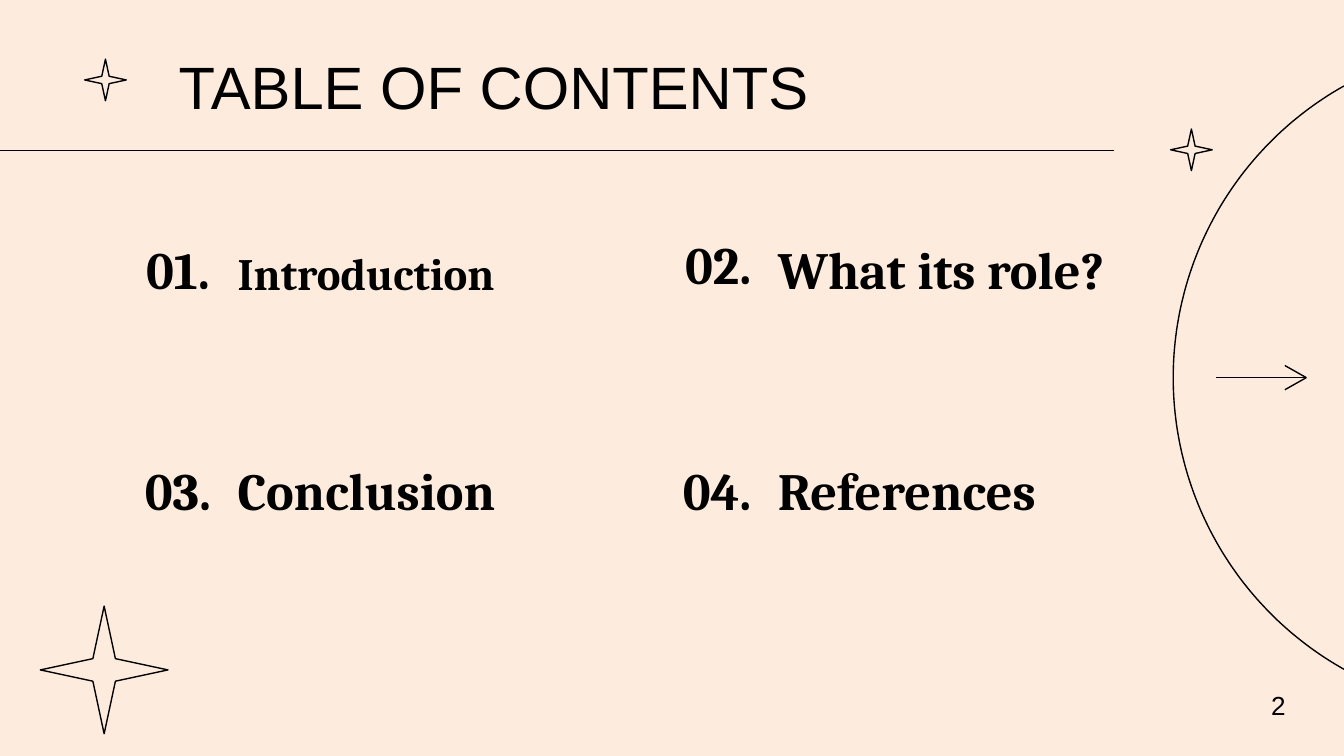
from math import asin, cos, sin

from pptx import Presentation
from pptx.dml.color import RGBColor
from pptx.enum.shapes import MSO_CONNECTOR, MSO_SHAPE
from pptx.enum.text import MSO_ANCHOR, MSO_AUTO_SIZE, PP_ALIGN
from pptx.oxml.ns import qn
from pptx.util import Inches, Pt

BLACK = RGBColor(0x00, 0x00, 0x00)
CREAM = RGBColor(0xFD, 0xEC, 0xDD)
STRAIGHT = MSO_CONNECTOR.STRAIGHT
STAR = MSO_SHAPE.STAR_4_POINT
MIDDLE, TOP = MSO_ANCHOR.MIDDLE, MSO_ANCHOR.TOP
LEFT, RIGHT = PP_ALIGN.LEFT, PP_ALIGN.RIGHT
NO_AUTOFIT = MSO_AUTO_SIZE.NONE

PAGE_WIDTH = 10
PAGE_HEIGHT = PAGE_WIDTH * 9 / 16
LINE_WIDTH = Pt(0.75)
NUMBER_WIDTH, ENTRY_WIDTH, ENTRY_HEIGHT = 0.88, 2.89, 0.58
COLUMNS = (1.67, 5.69)
ROWS = (1.71, 3.35)
ENTRIES = ("Introduction", "What its role?", "Conclusion", "References")
SMALL_ENTRY = "Introduction"
NUMBER_SHIFTS = {"01.": (-0.01, 0), "02.": (0, -0.04)}


def place(shape, left, top, width, height):
    shape.left, shape.top = Inches(left), Inches(top)
    shape.width, shape.height = Inches(width), Inches(height)


def write(shape, text, size, font, bold=False, align=LEFT, anchor=TOP, inset=0.05):
    frame = shape.text_frame
    frame.text = text
    frame.word_wrap = True
    frame.auto_size = NO_AUTOFIT
    frame.vertical_anchor = anchor
    frame.margin_left = frame.margin_right = Inches(0.1)
    frame.margin_top = frame.margin_bottom = Inches(inset)
    para = frame.paragraphs[0]
    para.alignment = align
    span = para.runs[0]
    span.font.name = font
    span.font.size = Pt(size)
    span.font.bold = bold
    span.font.color.rgb = BLACK


def add_text(page, left, top, width, height, text, size, font, **style):
    box = page.shapes.add_textbox(0, 0, 0, 0)
    place(box, left, top, width, height)
    write(box, text, size, font, **style)


def add_line(shapes, start, end):
    line = shapes.add_connector(STRAIGHT, *(Inches(value) for value in start + end))
    line.line.color.rgb = BLACK
    line.line.width = LINE_WIDTH
    properties = line._element.spPr
    properties.append(properties.makeelement(qn("a:effectLst"), {}))


def outline(shape):
    shape.shadow.inherit = False
    shape.fill.background()
    shape.line.color.rgb = BLACK
    shape.line.width = LINE_WIDTH


def add_star(page, left, top, size):
    star = page.shapes.add_shape(STAR, 0, 0, 0, 0)
    place(star, left, top, size, size)
    star.adjustments[0] = 0.125
    outline(star)


def add_arc(page, left, top, width, height, steps=120):
    """Draw the left part of a circle, cut off by the right side of the box."""
    half = height / 2
    radius = (width ** 2 + half ** 2) / (2 * width)
    reach = asin(half / radius)
    points = []
    for step in range(steps + 1):
        angle = reach * (2 * step / steps - 1)
        points.append((Inches(left + radius * (1 - cos(angle))),
                       Inches(top + half + radius * sin(angle))))
    builder = page.shapes.build_freeform(*points[0])
    builder.add_line_segments(points[1:], close=False)
    outline(builder.convert_to_shape())


def add_arrow(page, left, top, width, height):
    arrow = page.shapes.add_group_shape()
    tip = (left + width, top + height / 2)
    barb = left + width - 0.16
    for start in ((left, tip[1]), (barb, top), (barb, top + height)):
        add_line(arrow.shapes, start, tip)


def add_header(page, left, top, width, height):
    title = page.shapes.title
    place(title, left, top, width, height)
    write(title, "TABLE OF CONTENTS", 32, "Arial")
    rule_top = top + height + 0.16
    add_line(page.shapes, (8.29, rule_top), (0, rule_top))


def add_entry(page, left, top, number, label):
    """Place a label at the given corner, with its number to the left of it."""
    style = {"font": "Cambria", "bold": True, "anchor": MIDDLE, "inset": 0.1}
    shift_x, shift_y = NUMBER_SHIFTS.get(number, (0, 0))
    add_text(page, left - NUMBER_WIDTH + shift_x, top + shift_y, NUMBER_WIDTH,
             ENTRY_HEIGHT, number, 28, align=RIGHT, **style)
    if label == SMALL_ENTRY:
        width, height, size = 2.69, 0.64, 24
    else:
        width, height, size = ENTRY_WIDTH, ENTRY_HEIGHT, 28
    add_text(page, left, top, width, height, label, size, **style)


def add_contents(page):
    for index, label in enumerate(ENTRIES):
        row, column = divmod(index, len(COLUMNS))
        add_entry(page, COLUMNS[column], ROWS[row], f"{index + 1:02}.", label)


def add_decoration(page):
    add_arc(page, 8.73, 0.64, 1.27, 4.34)
    add_arrow(page, 9.05, 2.72, 0.67, 0.18)
    for left, top, size in ((0.3, 4.51, 0.95), (0.63, 0.44, 0.31), (8.71, 0.96, 0.31)):
        add_star(page, left, top, size)


def main():
    deck = Presentation()
    deck.slide_width, deck.slide_height = Inches(PAGE_WIDTH), Inches(PAGE_HEIGHT)
    page = deck.slides.add_slide(deck.slide_layouts[5])
    page.background.fill.solid()
    page.background.fill.fore_color.rgb = CREAM
    add_decoration(page)
    add_header(page, 1.23, 0.32, 5.28, 0.64)
    add_contents(page)
    add_text(page, 9.36, 5.08, 0.57, 0.34, "2", 14, "Arial")
    deck.save("out.pptx")


if __name__ == "__main__":
    main()
